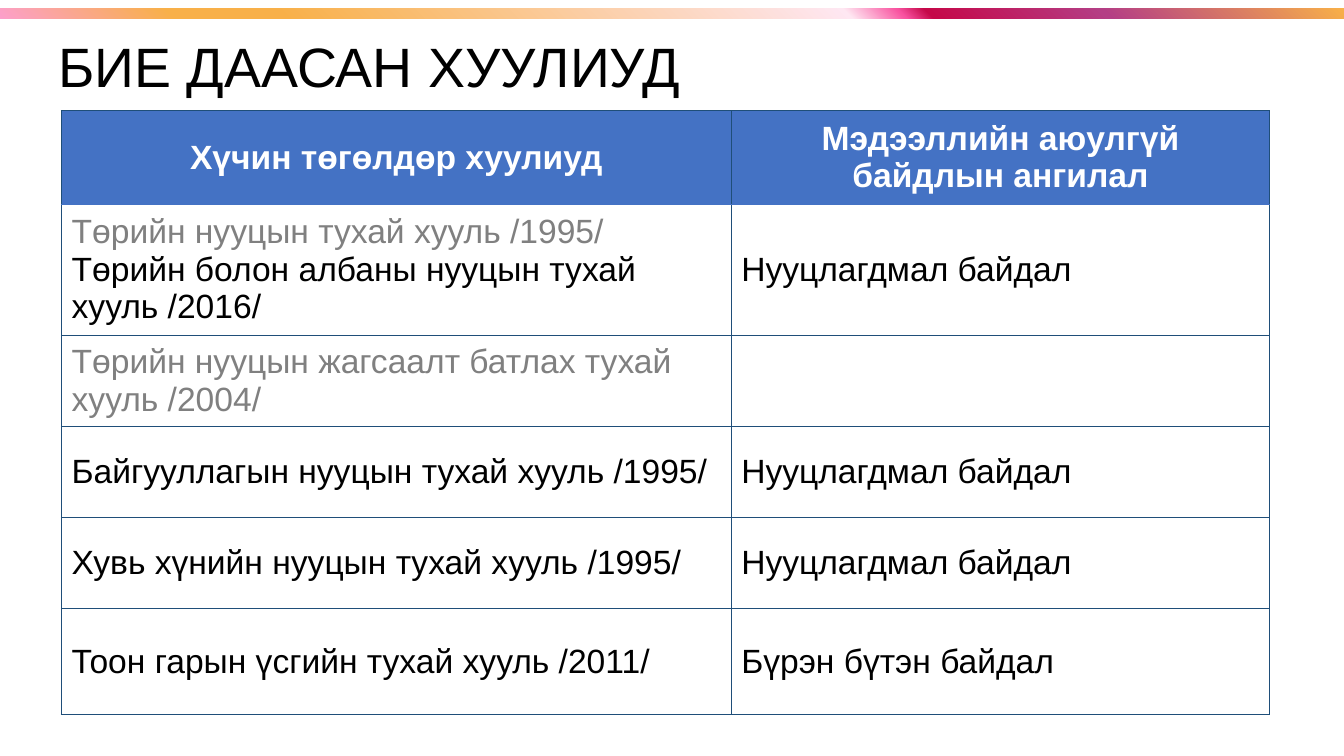
from lxml import etree
from pptx import Presentation
from pptx.dml.color import RGBColor
from pptx.enum import shapes, text
from pptx.oxml import ns
from pptx.util import Pt

HUES = {"black": "000000", "white": "FFFFFF", "gray": "808080",
        "blue": "4472C4", "navy": "1F4E79"}
STOPS = [(0, "FC9FCB"), (13, "F8B049"), (21, "F8B049"), (63, "FEE7F2"),
         (67, "F952A0"), (69, "C50849"), (82, "B43E85"), (100, "F8B049")]


def style(para, words, hue, **form):
    run = para.add_run()
    run.text = words
    for key, val in {"name": "Arial", "size": Pt(24), **form}.items():
        setattr(run.font, key, val)
    run.font.color.rgb = RGBColor.from_string(HUES[hue])


def add(parent, tag, **attrs):
    node = etree.SubElement(parent, ns.qn(tag))
    for key, val in attrs.items():
        node.set(key, str(val))
    return node


deck = Presentation()
deck.slide_width, deck.slide_height = Pt(960), Pt(540)
slide = deck.slides.add_slide(deck.slide_layouts[6])

# Table of laws: each cell is a list of (words, hue) paragraphs
secret = [("Нууцлагдмал байдал", "black")]
laws = [
    ([("Хүчин төгөлдөр хуулиуд", "white")],
     [("Мэдээллийн аюулгүй байдлын ангилал", "white")]),
    ([("Төрийн нууцын тухай хууль /1995/", "gray"),
      ("Төрийн болон албаны нууцын тухай хууль /2016/", "black")], secret),
    ([("Төрийн нууцын жагсаалт батлах тухай хууль /2004/", "gray")], []),
    ([("Байгууллагын нууцын тухай хууль /1995/", "black")], secret),
    ([("Хувь хүнийн нууцын тухай хууль /1995/", "black")], secret),
    ([("Тоон гарын үсгийн тухай хууль /2011/", "black")],
     [("Бүрэн бүтэн байдал", "black")]),
]
grid = slide.shapes.add_table(len(laws), 2, Pt(44), Pt(79.2), Pt(863), Pt(431)).table
for col, wide in zip(grid.columns, (478.3, 384.7)):
    col.width = Pt(wide)
for row, tall in zip(grid.rows, (66.5, 94, 65, 65, 65, 75.5)):
    row.height = Pt(tall)

for r, law in enumerate(laws):
    for c, lines in enumerate(law):
        cell = grid.cell(r, c)
        cell.vertical_anchor = text.MSO_ANCHOR.MIDDLE
        frame = cell.text_frame
        frame.paragraphs[0].font.size = Pt(24)
        for i, (words, hue) in enumerate(lines):
            para = frame.add_paragraph() if i else frame.paragraphs[0]
            para.alignment = text.PP_ALIGN.LEFT if r else text.PP_ALIGN.CENTER
            style(para, words, hue, bold=r == 0)
        # Borders come before the fill in the cell properties
        props = cell._tc.get_or_add_tcPr()
        for side in "LRTB":
            seam = (r, side) in ((0, "B"), (1, "T"))
            edge = add(props, f"a:ln{side}", w=Pt(0.5 if seam else 1))
            paint = add(edge, "a:solidFill")
            add(paint, "a:srgbClr", val=HUES["blue" if seam else "navy"])
        if r:
            cell.fill.background()
        else:
            cell.fill.solid()
            cell.fill.fore_color.rgb = RGBColor.from_string(HUES["blue"])

# Gradient strip along the top
strip = slide.shapes.add_shape(shapes.MSO_SHAPE.RECTANGLE, 0, Pt(5.8), Pt(960), Pt(7.5))
strip.shadow.inherit = False
strip.line.fill.background()
strip.fill.gradient()
blend = strip.fill._fill._gradFill
for node in list(blend):
    blend.remove(node)
marks = add(blend, "a:gsLst")
for at, hue in STOPS:
    add(add(marks, "a:gs", pos=at * 1000), "a:srgbClr", val=hue)
add(blend, "a:lin", ang=315 * 60000, scaled=0)

# Title
title = slide.shapes.add_textbox(Pt(34.6), Pt(24.5), Pt(828), Pt(50.4)).text_frame
title.word_wrap = True
title.vertical_anchor = text.MSO_ANCHOR.MIDDLE
title.paragraphs[0].line_spacing = 0.9
style(title.paragraphs[0], "БИЕ ДААСАН ХУУЛИУД", "black", size=Pt(39.6))

deck.save("out.pptx")
